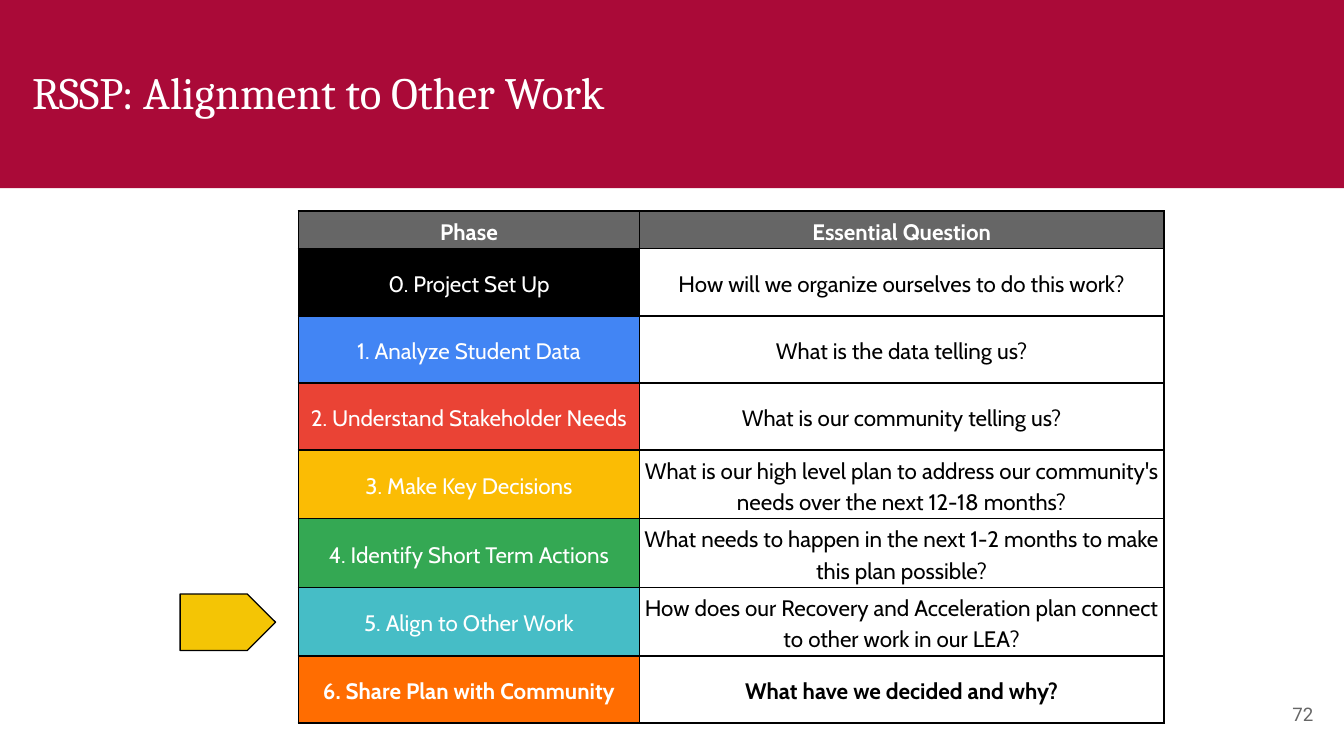
import pptx
import pptx.dml.color
import pptx.enum.shapes
import pptx.enum.text
import pptx.oxml
import pptx.oxml.ns
import pptx.util

Inches = pptx.util.Inches
Pt = pptx.util.Pt
SHAPES = pptx.enum.shapes.MSO_SHAPE
ALIGN = pptx.enum.text.PP_ALIGN
ANCHOR = pptx.enum.text.MSO_ANCHOR

PHASES = [
    ("Phase", "Essential Question", "666666"),
    ("0. Project Set Up", "How will we organize ourselves to do this work?", "000000"),
    ("1. Analyze Student Data", "What is the data telling us?", "4285F4"),
    ("2. Understand Stakeholder Needs", "What is our community telling us?", "EA4335"),
    ("3. Make Key Decisions", "What is our high level plan to address our community's "
     "needs over the next 12-18 months?", "FBBC04"),
    ("4. Identify Short Term Actions", "What needs to happen in the next 1-2 months to make "
     "this plan possible?", "34A853"),
    ("5. Align to Other Work", "How does our Recovery and Acceleration plan connect "
     "to other work in our LEA?", "46BDC6"),
    ("6. Share Plan with Community", "What have we decided and why?", "FF6D01"),
]


def color(value):
    """Return the colour for a hex string."""
    return pptx.dml.color.RGBColor.from_string(value)


def set_attributes(target, values):
    """Set each attribute of the target from a dict of format values."""
    for name, value in values.items():
        setattr(target, name, value)


def write_text(frame, text, font_name, size, hex_color, alignment, bold=False, spacing=1.0):
    """Write one formatted paragraph into a text frame."""
    paragraph = frame.paragraphs[0]
    set_attributes(paragraph, {"alignment": alignment, "line_spacing": spacing})
    run = paragraph.add_run()
    run.text = text
    set_attributes(run.font, {"name": font_name, "size": Pt(size), "bold": bold})
    run.font.color.rgb = color(hex_color)


def add_text(slide, box, anchor, *text_format):
    """Add a wrapped text box with the given vertical anchor."""
    frame = slide.shapes.add_textbox(*map(Inches, box)).text_frame
    margins = {f"margin_{side}": Inches(0.1) for side in ("left", "top", "right", "bottom")}
    set_attributes(frame, {"word_wrap": True, "vertical_anchor": anchor, **margins})
    write_text(frame, *text_format)


def add_block(slide, kind, box, fill, line=None):
    """Add a filled preset shape with an optional outline."""
    shape = slide.shapes.add_shape(kind, *map(Inches, box))
    shape.shadow.inherit = False
    shape.fill.solid()
    shape.fill.fore_color.rgb = color(fill)
    if line:
        shape.line.color.rgb = color(line)
        shape.line.width = Pt(0.75)
    else:
        shape.line.fill.background()


def add_borders(cell):
    """Draw a thin black line on every side of a table cell."""
    properties = cell._tc.get_or_add_tcPr()
    for side in "LRTB":
        properties.append(pptx.oxml.parse_xml(
            f'<a:ln{side} {pptx.oxml.ns.nsdecls("a")} w="{Pt(0.94)}">'
            f'<a:solidFill><a:srgbClr val="000000"/></a:solidFill></a:ln{side}>'))


def fill_cell(cell, text, fill, text_color, bold):
    """Format one table cell and write its text."""
    set_attributes(cell, {
        "vertical_anchor": ANCHOR.MIDDLE,
        "margin_left": Inches(0.03), "margin_right": Inches(0.03),
        "margin_top": Pt(1.8), "margin_bottom": Pt(1.8),
    })
    add_borders(cell)
    if fill:
        cell.fill.solid()
        cell.fill.fore_color.rgb = color(fill)
    else:
        cell.fill.background()
    write_text(cell.text_frame, text, "Cabin", 12, text_color, ALIGN.CENTER, bold, 1.15)


def add_phase_table(slide):
    """Add the table of phases and their essential questions."""
    box = map(Inches, (2.22, 1.57, 6.44, 3.7))
    table = slide.shapes.add_table(len(PHASES), 2, *box).table
    set_attributes(table, {"first_row": False, "horz_banding": False})
    for column, width in zip(table.columns, (2.54, 3.9)):
        column.width = Inches(width)
    for index, (phase, question, fill) in enumerate(PHASES):
        header = index == 0
        bold = index in (0, len(PHASES) - 1)
        table.rows[index].height = Inches(0.2 if header else 0.5)
        fill_cell(table.cell(index, 0), phase, fill, "FFFFFF", bold)
        fill_cell(table.cell(index, 1), question, fill if header else None,
                  "FFFFFF" if header else "000000", bold)


def main():
    """Build the slide and save it."""
    presentation = pptx.Presentation()
    set_attributes(presentation, {"slide_width": Inches(10), "slide_height": Inches(10 * 9 / 16)})
    slide = presentation.slides.add_slide(presentation.slide_layouts[6])
    add_block(slide, SHAPES.RECTANGLE, (0, 0, 10, 1.4), "AA0A38")
    add_text(slide, (0.14, 0.38, 9.32, 0.63), ANCHOR.TOP, "RSSP: Alignment to Other Work",
             "Cambria", 24, "FFFFFF", ALIGN.LEFT)
    add_phase_table(slide)
    add_block(slide, SHAPES.PENTAGON, (1.34, 4.42, 0.71, 0.42), "F4C505", "000000")
    add_text(slide, (9.27, 5.1, 0.6, 0.43), ANCHOR.MIDDLE, "72",
             "Roboto", 10, "666666", ALIGN.RIGHT)
    presentation.save("out.pptx")


if __name__ == "__main__":
    main()
